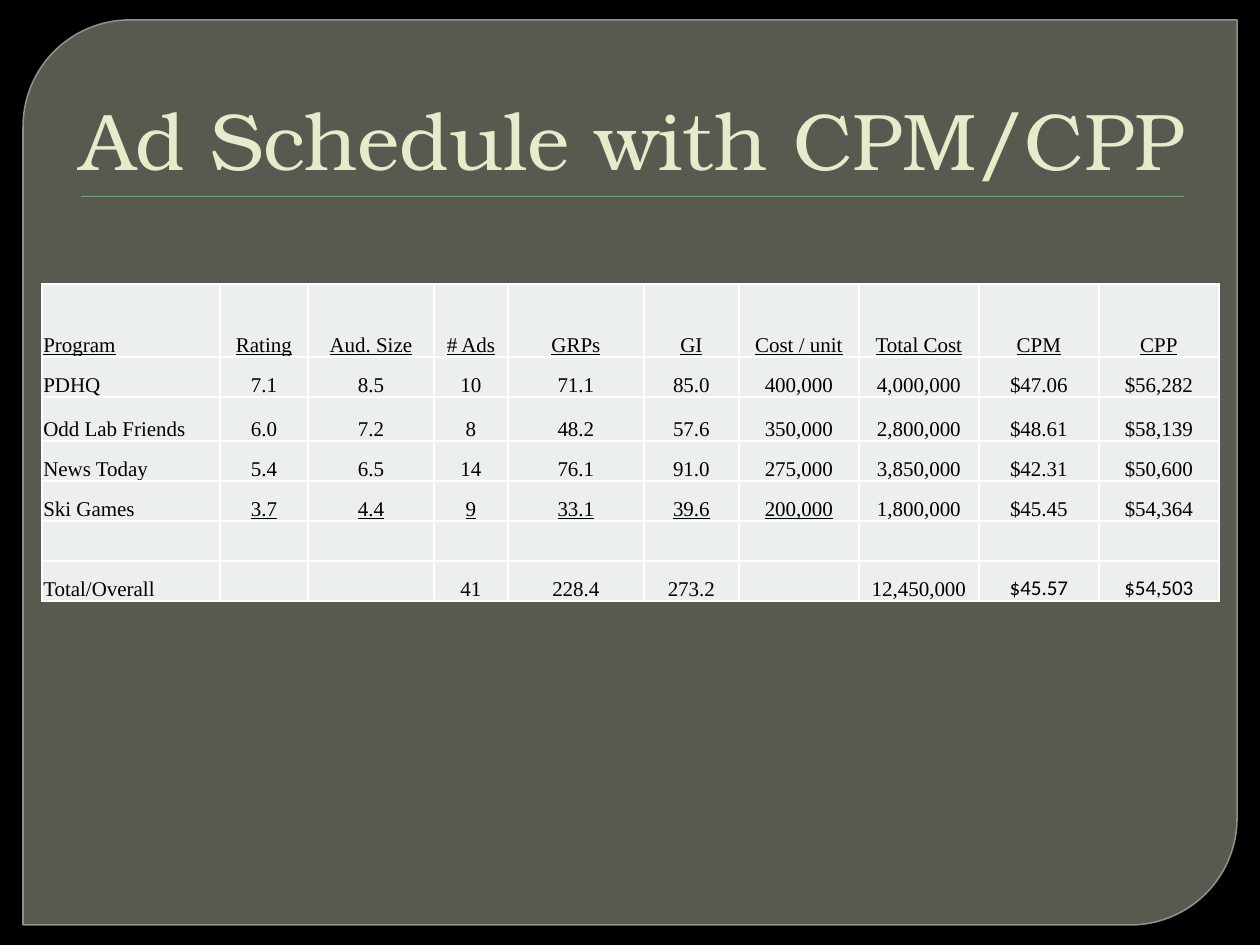
from lxml import etree
from pptx import Presentation
from pptx import util as u
from pptx.dml.color import RGBColor
from pptx.enum import shapes, text
from pptx.oxml import ns

TITLE = "Ad Schedule with CPM/CPP"
HEADINGS = ["Program", "Rating", "Aud. Size", "# Ads", "GRPs", "GI",
            "Cost / unit", "Total Cost", "CPM", "CPP"]
PROGRAMS = [
    ["PDHQ", "7.1", "8.5", "10", "71.1", "85.0", "400,000", "4,000,000", "$47.06", "$56,282"],
    ["Odd Lab Friends", "6.0", "7.2", "8", "48.2", "57.6", "350,000", "2,800,000", "$48.61", "$58,139"],
    ["News Today", "5.4", "6.5", "14", "76.1", "91.0", "275,000", "3,850,000", "$42.31", "$50,600"],
    ["Ski Games", "3.7", "4.4", "9", "33.1", "39.6", "200,000", "1,800,000", "$45.45", "$54,364"],
]
SPACER = [""] * len(HEADINGS)
TOTALS = ["Total/Overall", "", "", "41", "228.4", "273.2", "", "12,450,000", "$45.57", "$54,503"]
SCHEDULE = [HEADINGS, *PROGRAMS, SPACER, TOTALS]

COLUMN_WIDTHS = [178, 88, 126, 74, 136, 95] + [120] * 4
ROW_HEIGHTS = [73, 40, 44, 40, 40, 40, 40]
HEADING_ROW, LAST_PROGRAM_ROW, TOTAL_ROW = 0, len(PROGRAMS), len(SCHEDULE) - 1
SUMMED_COLUMNS = range(1, 7)
RATIO_COLUMNS = (8, 9)

BLACK = RGBColor(0x00, 0x00, 0x00)
WHITE = RGBColor(0xFF, 0xFF, 0xFF)
PANEL = RGBColor(0x88, 0x8B, 0x7B)
PANEL_EDGE = RGBColor(0x9D, 0xA0, 0x90)
GREEN = RGBColor(0x72, 0xA3, 0x76)
CREAM = RGBColor(0xE7, 0xEA, 0xCB)
CELL = RGBColor(0xEB, 0xF0, 0xEC)

EMU_PER_PX = 914400 / 126


def px(*lengths):
    return [u.Emu(round(length * EMU_PER_PX)) for length in lengths]


def assign(target, values):
    for name, value in values.items():
        setattr(target, name, value)


def set_opacity(fill_parent, percent):
    color = fill_parent.find(ns.qn("a:solidFill"))[0]
    etree.SubElement(color, ns.qn("a:alpha"), val=str(percent * 1000))


def add_plain_shape(slide, preset, box, color):
    shape = slide.shapes.add_shape(preset, *px(*box))
    shape.shadow.inherit = False
    shape.fill.solid()
    shape.fill.fore_color.rgb = color
    return shape


def add_panel(slide):
    panel = add_plain_shape(slide, shapes.MSO_SHAPE.ROUND_2_DIAG_RECTANGLE,
                            (23, 20, 1214, 905), PANEL)
    panel.adjustments[0], panel.adjustments[1] = 0.118, 0
    panel.line.color.rgb = PANEL_EDGE
    panel.line.width = u.Pt(0.87)
    properties = panel.element.spPr
    set_opacity(properties, 65)
    set_opacity(properties.find(ns.qn("a:ln")), 88)


def add_title(slide):
    title = slide.shapes.title
    left, top, width, height = px(63, 35, 1134, 158)
    assign(title, dict(left=left, top=top, width=width, height=height))
    frame = title.text_frame
    frame.text = TITLE
    assign(frame, dict(vertical_anchor=text.MSO_ANCHOR.BOTTOM, word_wrap=True,
                       auto_size=text.MSO_AUTO_SIZE.NONE, margin_left=0))
    paragraph = frame.paragraphs[0]
    paragraph.alignment = text.PP_ALIGN.RIGHT
    font = paragraph.runs[0].font
    assign(font, dict(name="TeX Gyre Bonum", size=u.Pt(46)))
    font.color.rgb = CREAM
    # The placeholder comes first in the tree; move it in front of the panel.
    title.element.getparent().append(title.element)


def set_borders(cell, color, width):
    properties = cell._tc.get_or_add_tcPr()
    for index, side in enumerate(("lnL", "lnR", "lnT", "lnB")):
        line = etree.Element(ns.qn(f"a:{side}"), w=str(width))
        fill = etree.SubElement(line, ns.qn("a:solidFill"))
        etree.SubElement(fill, ns.qn("a:srgbClr"), val=str(color))
        properties.insert(index, line)


def fill_cell(cell, value, row, column):
    inset = u.Inches(0.01)
    assign(cell, dict(vertical_anchor=text.MSO_ANCHOR.BOTTOM, margin_left=inset,
                      margin_right=inset, margin_top=inset, margin_bottom=0))
    cell.fill.solid()
    cell.fill.fore_color.rgb = CELL
    set_borders(cell, WHITE, u.Pt(1))
    paragraph = cell.text_frame.paragraphs[0]
    paragraph.alignment = text.PP_ALIGN.CENTER if column else text.PP_ALIGN.LEFT
    if not value:
        paragraph.font.size = u.Pt(12)
        return
    run = paragraph.add_run()
    run.text = value
    overall_ratio = row == TOTAL_ROW and column in RATIO_COLUMNS
    above_total = row == LAST_PROGRAM_ROW and column in SUMMED_COLUMNS
    assign(run.font, dict(name="Calibri" if overall_ratio else "Times New Roman",
                          size=u.Pt(12), underline=row == HEADING_ROW or above_total))
    run.font.color.rgb = BLACK


def add_schedule(slide):
    box = px(42, 284, sum(COLUMN_WIDTHS), sum(ROW_HEIGHTS))
    table = slide.shapes.add_table(len(SCHEDULE), len(HEADINGS), *box).table
    assign(table, dict(first_row=False, horz_banding=False))
    for column, width in zip(table.columns, px(*COLUMN_WIDTHS)):
        column.width = width
    for row, height in zip(table.rows, px(*ROW_HEIGHTS)):
        row.height = height
    for r, values in enumerate(SCHEDULE):
        for c, value in enumerate(values):
            fill_cell(table.cell(r, c), value, r, c)


def main():
    deck = Presentation()
    deck.slide_width, deck.slide_height = px(1260, 945)
    slide = deck.slides.add_slide(deck.slide_layouts[5])
    slide.background.fill.solid()
    slide.background.fill.fore_color.rgb = BLACK
    add_panel(slide)
    rule = add_plain_shape(slide, shapes.MSO_SHAPE.RECTANGLE, (81, 196, 1103, 1), GREEN)
    rule.line.fill.background()
    add_title(slide)
    add_schedule(slide)
    deck.save("out.pptx")


if __name__ == "__main__":
    main()
